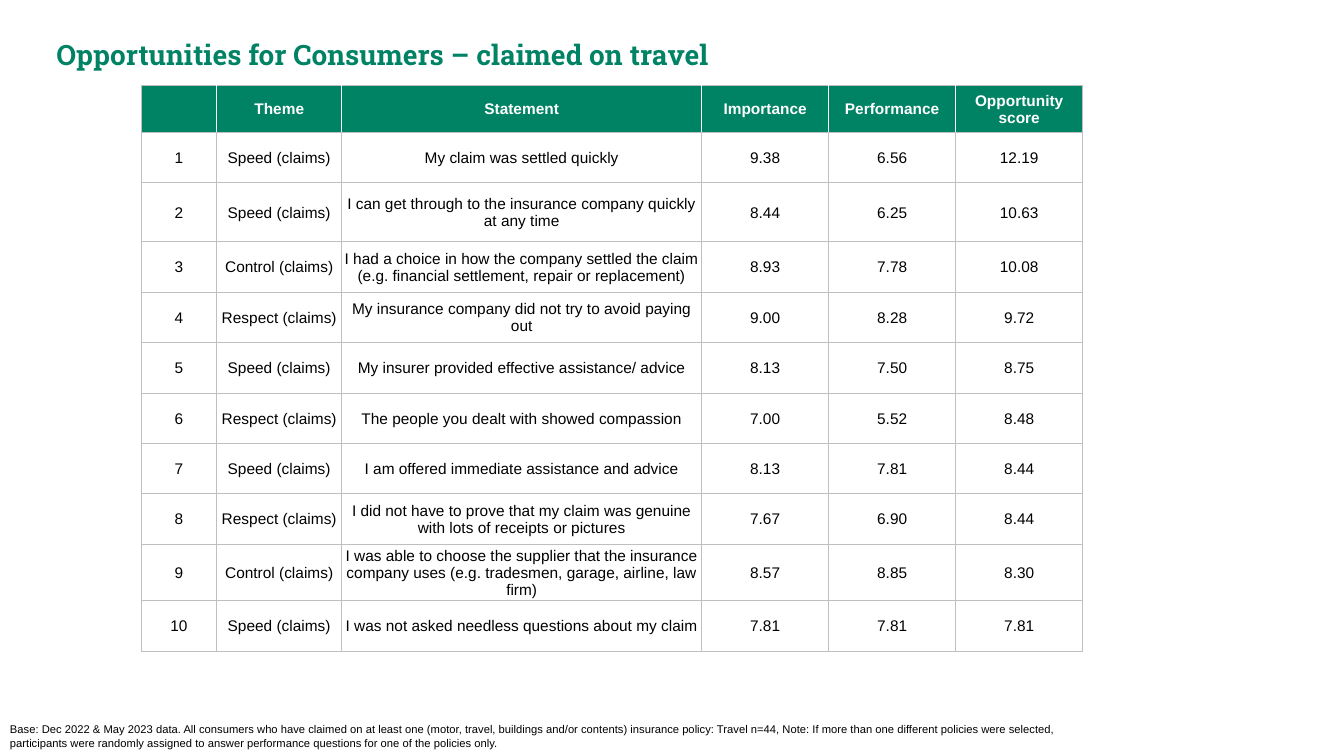
from lxml.etree import SubElement
from pptx import Presentation
from pptx.dml.color import RGBColor
from pptx.enum.text import MSO_ANCHOR as ANCHOR, PP_ALIGN as ALIGN
from pptx.oxml.ns import qn
from pptx.util import Inches, Pt

GREEN, WHITE, BLACK, GREY = "008265", "FFFFFF", "000000", "BFBFBF"
COL_WIDTHS = [0.75, 1.24, 3.57, 1.26, 1.26, 1.26]
HEADER_HEIGHT, ROW_HEIGHT, TALL_ROW_HEIGHT = 0.46, 0.5, 0.59
TALL_ROW = 2

TITLE = "Opportunities for Consumers – claimed on travel"
HEADERS = ["", "Theme", "Statement", "Importance", "Performance", "Opportunity score"]
OPPORTUNITIES = [
    ("Speed", "My claim was settled quickly", "9.38", "6.56", "12.19"),
    ("Speed", "I can get through to the insurance company quickly at any time",
     "8.44", "6.25", "10.63"),
    ("Control", "I had a choice in how the company settled the claim "
     "(e.g. financial settlement, repair or replacement)", "8.93", "7.78", "10.08"),
    ("Respect", "My insurance company did not try to avoid paying out",
     "9.00", "8.28", "9.72"),
    ("Speed", "My insurer provided effective assistance/ advice", "8.13", "7.50", "8.75"),
    ("Respect", "The people you dealt with showed compassion", "7.00", "5.52", "8.48"),
    ("Speed", "I am offered immediate assistance and advice", "8.13", "7.81", "8.44"),
    ("Respect", "I did not have to prove that my claim was genuine "
     "with lots of receipts or pictures", "7.67", "6.90", "8.44"),
    ("Control", "I was able to choose the supplier that the insurance company uses "
     "(e.g. tradesmen, garage, airline, law firm)", "8.57", "8.85", "8.30"),
    ("Speed", "I was not asked needless questions about my claim", "7.81", "7.81", "7.81"),
]
BASE_NOTE = (
    "Base: Dec 2022 & May 2023 data. All consumers who have claimed on at least one "
    "(motor, travel, buildings and/or contents) insurance policy: Travel n=44, "
    "Note: If more than one different policies were selected, participants were "
    "randomly assigned to answer performance questions for one of the policies only."
)


def rgb(color):
    return RGBColor.from_string(color)


def style_font(p, size, color, name="Arial", bold=False):
    font = p.font
    font.size, font.name, font.bold = Pt(size), name, bold
    font.color.rgb = rgb(color)


def add_text(slide, text, box, size, color, name="Arial", bold=False):
    tf = slide.shapes.add_textbox(*(Inches(v) for v in box)).text_frame
    tf.word_wrap = True
    p = tf.paragraphs[0]
    p.text = text
    style_font(p, size, color, name, bold)


def set_borders(cell, header, first, last):
    """Thin grey lines, with white ones between the header cells."""
    tc_pr = cell._tc.get_or_add_tcPr()
    white_sides = {"L": header and not first, "R": header and not last}
    for i, side in enumerate("LRTB"):
        white = white_sides.get(side, False)
        ln = SubElement(tc_pr, qn(f"a:ln{side}"), w=str(Pt(1 if white else 0.75)))
        fill = SubElement(ln, qn("a:solidFill"))
        SubElement(fill, qn("a:srgbClr"), val=WHITE if white else GREY)
        tc_pr.insert(i, ln)


def fill_cell(cell, text, header):
    cell.vertical_anchor = ANCHOR.MIDDLE
    if header:
        cell.fill.solid()
        cell.fill.fore_color.rgb = rgb(GREEN)
    else:
        cell.fill.background()
    cell.margin_left = cell.margin_right = cell.margin_top = Inches(0.01)
    cell.margin_bottom = 0
    p = cell.text_frame.paragraphs[0]
    p.text = text
    p.alignment = ALIGN.CENTER
    style_font(p, 11, WHITE if header else BLACK, bold=header)


def add_opportunity_table(slide, left, top):
    rows = [HEADERS] + [
        (str(rank), f"{theme} (claims)", *rest)
        for rank, (theme, *rest) in enumerate(OPPORTUNITIES, 1)
    ]
    heights = [HEADER_HEIGHT] + [ROW_HEIGHT] * len(OPPORTUNITIES)
    heights[TALL_ROW] = TALL_ROW_HEIGHT
    table = slide.shapes.add_table(
        len(rows), len(COL_WIDTHS), Inches(left), Inches(top),
        Inches(sum(COL_WIDTHS)), Inches(sum(heights))).table
    table.first_row = table.horz_banding = False
    for col, width in zip(table.columns, COL_WIDTHS):
        col.width = Inches(width)
    last = len(COL_WIDTHS) - 1
    for r, (values, height) in enumerate(zip(rows, heights)):
        table.rows[r].height = Inches(height)
        for c, text in enumerate(values):
            cell = table.cell(r, c)
            fill_cell(cell, text, header=r == 0)
            set_borders(cell, r == 0, c == 0, c == last)


def main():
    prs = Presentation()
    prs.slide_width, prs.slide_height = Inches(13.33), Inches(7.5)
    slide = prs.slides.add_slide(prs.slide_layouts[6])
    add_text(slide, TITLE, (0.46, 0.32, 12.28, 0.44), 20, GREEN, "Roboto Slab", True)
    add_opportunity_table(slide, 1.4, 0.85)
    add_text(slide, BASE_NOTE, (0, 7.12, 10.89, 0.38), 8, BLACK)
    prs.save("out.pptx")


if __name__ == "__main__":
    main()
